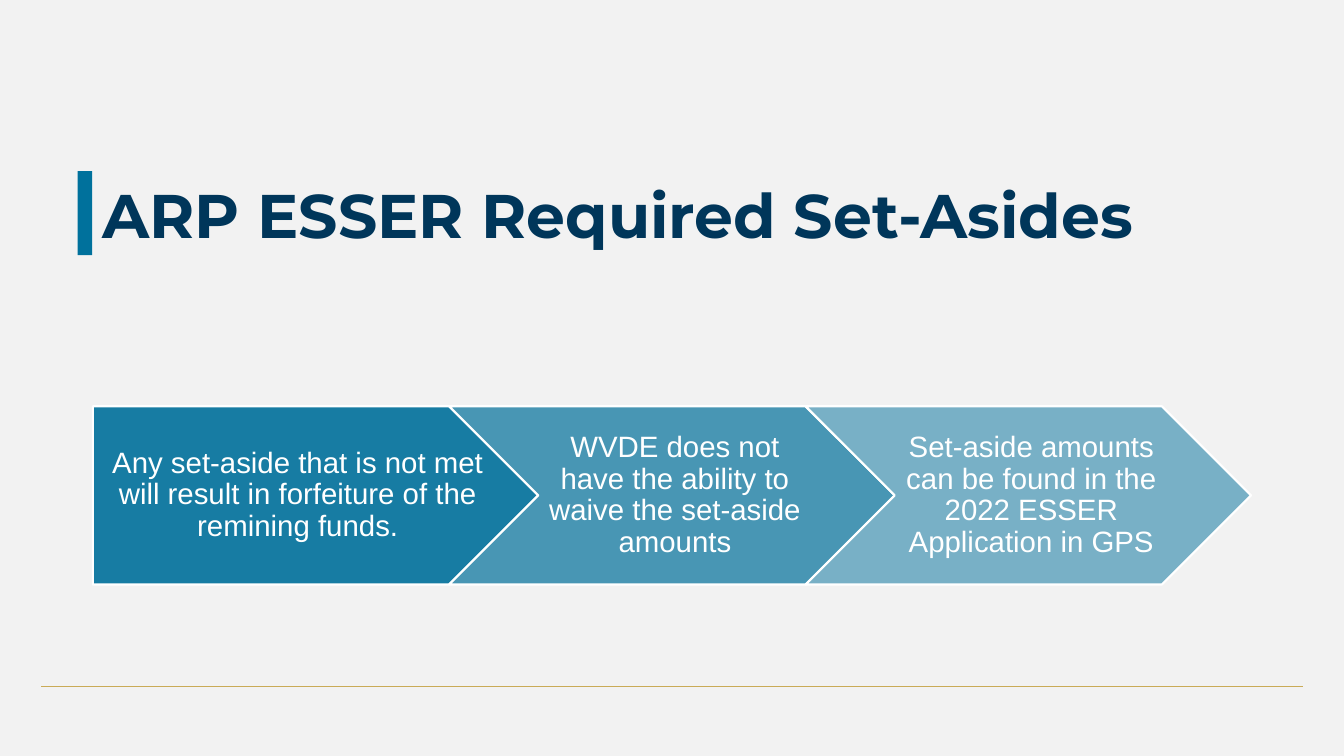
from lxml import etree
from pptx import Presentation
from pptx.dml.color import RGBColor
from pptx.enum import shapes, text
from pptx.oxml.ns import qn
from pptx.util import Pt

TITLE = "ARP ESSER Required Set-Asides"
STEPS = [
    # wording, fill opacity in percent
    ("Any set-aside that is not met will result in forfeiture of the remining funds.", 90),
    ("WVDE does not have the ability to waive the set-aside amounts", 70),
    ("Set-aside amounts can be found in the 2022 ESSER Application in GPS", 50),
]

THEME = {
    "background": "F2F2F2", "rule": "CAAB57", "accent": "00719C",
    "title": "00365A", "step": "00709B", "light": "FFFFFF",
    "title_font": "Montserrat", "step_font": "Arial",
    "title_size": 44, "step_size": 21,
}

SLIDE_WIDTH, SLIDE_HEIGHT = 960, 540
STEP_LEFT, STEP_TOP, STEP_WIDTH, STEP_HEIGHT = 66.3, 290.2, 318.2, 127.3
POINT_DEPTH = STEP_HEIGHT / 2
STEP_PITCH = STEP_WIDTH * 0.8


def color(name):
    return RGBColor.from_string(THEME[name])


def add_block(slide, kind, box, fill):
    shape = slide.shapes.add_shape(kind, *map(Pt, box))
    shape.shadow.inherit = False
    shape.fill.solid()
    shape.fill.fore_color.rgb = color(fill)
    shape.line.fill.background()
    return shape


def add_label(slide, box, wording, role, font_name, size, insets):
    """Add a vertically centred text box; insets run left, top, right, bottom."""
    label = slide.shapes.add_textbox(*map(Pt, box))
    frame = label.text_frame
    frame.word_wrap = True
    frame.vertical_anchor = text.MSO_ANCHOR.MIDDLE
    frame.margin_left, frame.margin_top, frame.margin_right, frame.margin_bottom = map(Pt, insets)
    frame.text = wording
    paragraph = frame.paragraphs[0]
    paragraph.line_spacing = 0.9
    font = paragraph.runs[0].font
    font.name = THEME[font_name]
    font.size = Pt(THEME[size])
    font.color.rgb = color(role)
    return paragraph


def add_rule(slide):
    rule = slide.shapes.add_connector(
        shapes.MSO_CONNECTOR.STRAIGHT, Pt(29.5), Pt(490.3), Pt(930.5), Pt(490.3))
    rule.line.color.rgb = color("rule")
    rule.line.width = Pt(1)
    etree.SubElement(rule._element.spPr, qn("a:effectLst"))


def add_title(slide):
    add_block(slide, shapes.MSO_SHAPE.RECTANGLE, (55.5, 122.2, 10.4, 60), "accent")
    paragraph = add_label(slide, (66.2, 103.7, 828, 104.4), TITLE, "title",
                          "title_font", "title_size", (7.2, 3.6, 7.2, 3.6))
    paragraph.runs[0].font.bold = True


def add_step(slide, index, wording, opacity):
    left = STEP_LEFT + index * STEP_PITCH
    if index == 0:
        kind = shapes.MSO_SHAPE.PENTAGON
        text_left, text_width, inset = left, STEP_WIDTH - POINT_DEPTH / 2, 8.4
    else:
        kind = shapes.MSO_SHAPE.CHEVRON
        text_left, text_width, inset = left + POINT_DEPTH, STEP_WIDTH - 2 * POINT_DEPTH, 6.3

    arrow = add_block(slide, kind, (left, STEP_TOP, STEP_WIDTH, STEP_HEIGHT), "step")
    arrow.line.color.rgb = color("light")
    arrow.line.width = Pt(1.5)
    fill_color = arrow._element.spPr.find(qn("a:solidFill"))[0]
    etree.SubElement(fill_color, qn("a:alpha"), val=str(opacity * 1000))

    paragraph = add_label(slide, (text_left, STEP_TOP, text_width, STEP_HEIGHT), wording,
                          "light", "step_font", "step_size", (inset, 4.2, 2.1, 4.2))
    paragraph.alignment = text.PP_ALIGN.CENTER


def main():
    presentation = Presentation()
    presentation.slide_width, presentation.slide_height = Pt(SLIDE_WIDTH), Pt(SLIDE_HEIGHT)
    slide = presentation.slides.add_slide(presentation.slide_layouts[6])
    slide.background.fill.solid()
    slide.background.fill.fore_color.rgb = color("background")

    add_rule(slide)
    add_title(slide)
    for index, (wording, opacity) in enumerate(STEPS):
        add_step(slide, index, wording, opacity)
    presentation.save("out.pptx")


if __name__ == "__main__":
    main()
